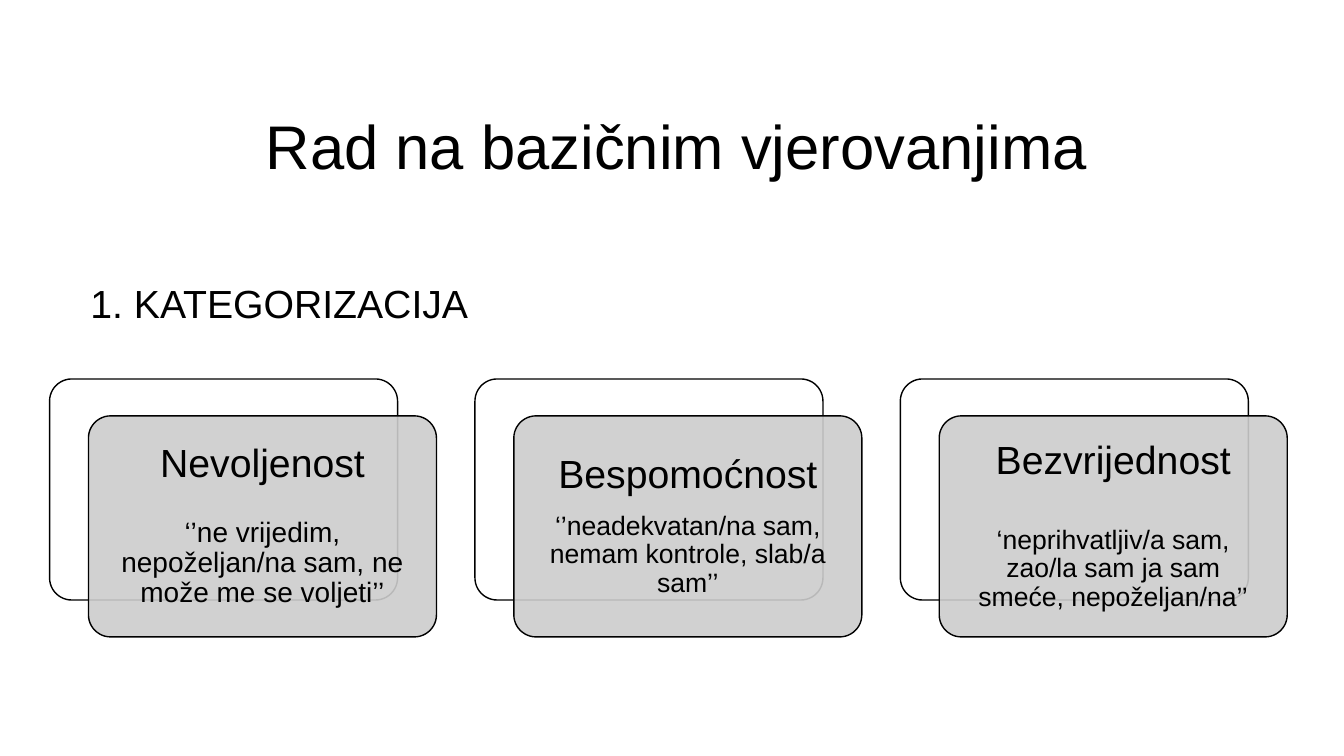
from dataclasses import dataclass

from lxml.etree import SubElement
from pptx import Presentation
from pptx.dml.color import RGBColor as RGB
from pptx.enum.shapes import MSO_SHAPE as Shape
from pptx.enum.text import MSO_ANCHOR as Anchor, PP_ALIGN as Align
from pptx.oxml.ns import qn
from pptx.util import Cm, Pt


@dataclass(frozen=True)
class Theme:
    font: str = "Arial"
    ink: RGB = RGB(0, 0, 0)
    back: RGB = RGB(255, 255, 255)
    front: RGB = RGB(204, 204, 204)
    alpha: int = 90
    title: int = 44
    head: int = 28


LOOK = Theme()

# Heading, belief, belief size, gap between them in points
CARDS = [
    ("Nevoljenost", "‘’ne vrijedim, nepoželjan/na sam, ne može me se voljeti’’", 20, 23),
    ("Bespomoćnost", "‘’neadekvatan/na sam, nemam kontrole, slab/a sam’’", 19, 11),
    ("Bezvrijednost", "‘neprihvatljiv/a sam, zao/la sam ja sam smeće, nepoželjan/na’’", 19, 31),
]


def style(para, size, align=Align.LEFT, lead=1.0):
    para.alignment = align
    para.line_spacing = lead
    for run in para.runs:
        run.font.name = LOOK.font
        run.font.size = Pt(size)
        run.font.color.rgb = LOOK.ink


def add_title(slide, left, top, width, height):
    title = slide.shapes.title
    title.left, title.top = Cm(left), Cm(top)
    title.width, title.height = Cm(width), Cm(height)
    frame = title.text_frame
    frame.text = "Rad na bazičnim vjerovanjima"
    frame.vertical_anchor = Anchor.MIDDLE
    style(frame.paragraphs[0], LOOK.title, Align.CENTER, 0.9)


def add_step(slide, left, top, width, height):
    box = slide.shapes.add_textbox(Cm(left), Cm(top), Cm(width), Cm(height))
    frame = box.text_frame
    frame.word_wrap = True
    frame.text = "1. KATEGORIZACIJA"
    style(frame.paragraphs[0], LOOK.head)


def add_panel(slide, left, top, width, height, fill):
    panel = slide.shapes.add_shape(
        Shape.ROUNDED_RECTANGLE, Cm(left), Cm(top), Cm(width), Cm(height))
    panel.adjustments[0] = 0.1
    panel.shadow.inherit = False
    panel.fill.solid()
    panel.fill.fore_color.rgb = fill
    panel.line.color.rgb = LOOK.ink
    panel.line.width = Pt(1)
    return panel


def add_card(slide, left, top, width, height, card):
    head, belief, size, gap = card
    # Back panel, then the see-through front panel shifted down and right
    add_panel(slide, left, top, width, height, LOOK.back)
    front = add_panel(slide, left + 0.98, top + 0.93, width, height, LOOK.front)
    tint = front.fill._xPr.find(qn("a:solidFill"))[0]
    SubElement(tint, qn("a:alpha")).set("val", str(LOOK.alpha * 1000))

    # Heading and belief
    frame = front.text_frame
    frame.word_wrap = True
    frame.vertical_anchor = Anchor.MIDDLE
    frame.margin_left = frame.margin_right = Cm(0.42)
    frame.margin_top = frame.margin_bottom = Cm(0.46)
    frame.text = f"{head}\n{belief}"
    for para, points in zip(frame.paragraphs, (LOOK.head, size)):
        style(para, points, Align.CENTER, 0.9)
    frame.paragraphs[0].space_after = Pt(gap)


def add_cards(slide, left, top, width, height):
    pitch = 10.72
    wide = width - 0.98 - pitch * (len(CARDS) - 1)
    for i, card in enumerate(CARDS):
        add_card(slide, left + i * pitch, top, wide, height - 0.93, card)


def main():
    deck = Presentation()
    deck.slide_width, deck.slide_height = Cm(33.87), Cm(19.05)
    slide = deck.slides.add_slide(deck.slide_layouts[5])
    add_title(slide, 2.03, 1.75, 30.05, 4.04)
    add_step(slide, 2.03, 6.91, 26.8, 1.45)
    add_cards(slide, 1.25, 9.55, 31.19, 6.5)
    deck.save("out.pptx")


if __name__ == "__main__":
    main()
